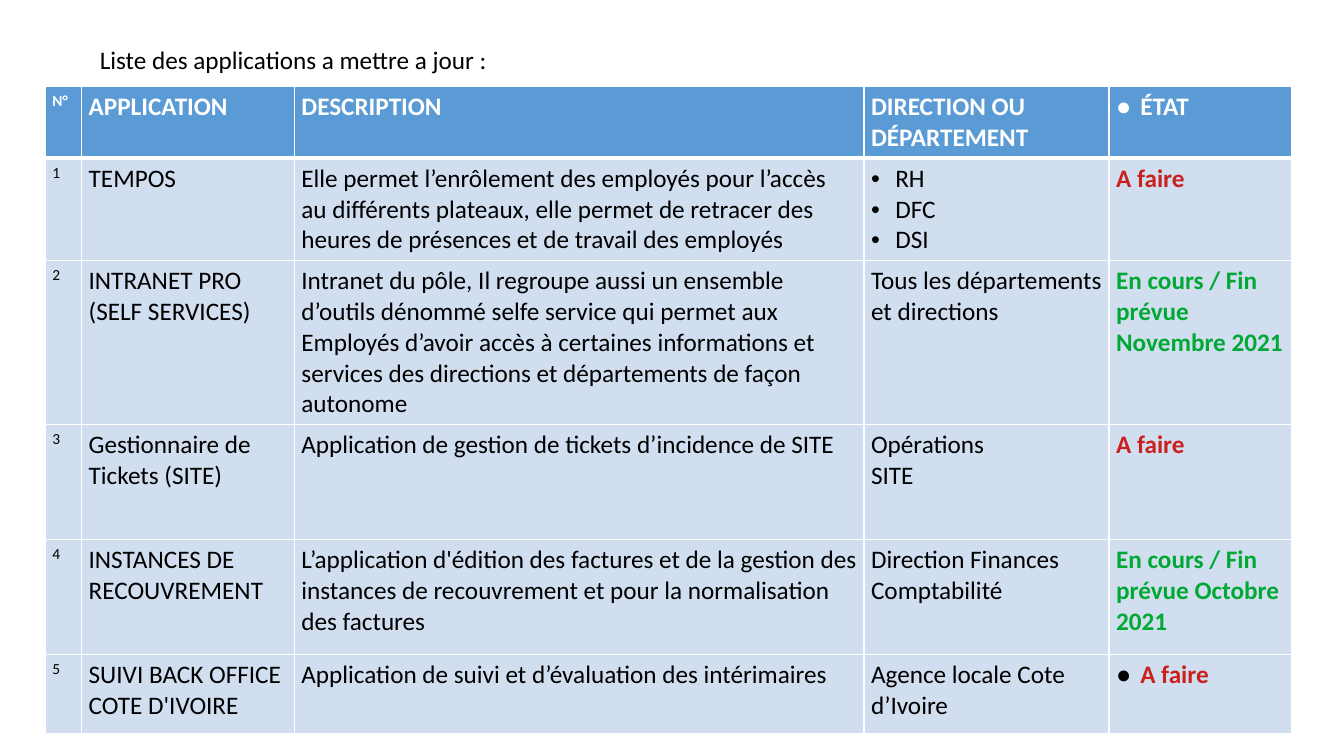
"""Build the slide listing the applications to update."""
from dataclasses import dataclass

import lxml.etree
import pptx
import pptx.dml.color
import pptx.enum.text
import pptx.oxml.ns
import pptx.util
from pptx.util import Inches

COLORS = {
    "header": "5B9BD5",
    "body": "D1DEEF",
    "white": "FFFFFF",
    "black": "000000",
    "todo": "C9211E",
    "ongoing": "00A933",
}
FONT = "Calibri"
COLUMN_WIDTHS = [0.36, 2.11, 5.65, 2.43, 1.81]
ROW_HEIGHTS = [0.6, 0.98, 1.36, 1.14, 1.14, 0.79]
HEADINGS = ["N°", "APPLICATION", "DESCRIPTION", "DIRECTION OU DÉPARTEMENT", "ÉTAT"]
THIN, THICK = 0.96, 3


@dataclass
class Application:
    """One application with its owner and its progress."""
    name: str
    description: str
    departments: list[str]
    state: str
    state_color: str
    department_bullet: str = ""
    state_bullet: str = ""


APPLICATIONS = [
    Application(
        "TEMPOS",
        "Elle permet l’enrôlement des employés pour l’accès au différents plateaux, "
        "elle permet de retracer des heures de présences et de travail des employés",
        ["RH", "DFC", "DSI"], "A faire", "todo", department_bullet="•"),
    Application(
        "INTRANET PRO (SELF SERVICES)",
        "Intranet du pôle, Il regroupe aussi un ensemble d’outils dénommé selfe service "
        "qui permet aux Employés d’avoir accès à certaines informations et services "
        "des directions et départements de façon autonome",
        ["Tous les départements et directions"],
        "En cours / Fin prévue Novembre 2021", "ongoing"),
    Application(
        "Gestionnaire de Tickets (SITE)",
        "Application de gestion de tickets d’incidence de SITE",
        ["Opérations", "SITE"], "A faire", "todo"),
    Application(
        "INSTANCES DE RECOUVREMENT",
        "L’application d'édition des factures et de la gestion des instances de "
        "recouvrement et pour la normalisation des factures",
        ["Direction Finances Comptabilité"],
        "En cours / Fin prévue Octobre 2021", "ongoing"),
    Application(
        "SUIVI BACK OFFICE COTE D'IVOIRE",
        "Application de suivi et d’évaluation des intérimaires",
        ["Agence locale Cote d’Ivoire"], "A faire", "todo", state_bullet="●"),
]


def rgb(color: str) -> pptx.dml.color.RGBColor:
    """Return the named colour."""
    return pptx.dml.color.RGBColor.from_string(COLORS[color])


def add_element(parent, tag: str, **attributes: str):
    """Append a drawing element to its parent."""
    return lxml.etree.SubElement(parent, pptx.oxml.ns.qn(tag), attributes)


def add_color(parent, color: str) -> None:
    """Append a colour value to an element."""
    add_element(parent, "a:srgbClr", val=COLORS[color])


def add_bullet(para, symbol: str, color: str) -> None:
    """Give a paragraph a hanging bullet."""
    properties = para._p.get_or_add_pPr()
    properties.set("marL", str(Inches(0.24)))
    properties.set("indent", str(Inches(-0.24)))
    add_color(add_element(properties, "a:buClr"), color)
    add_element(properties, "a:buFont", typeface="Arial")
    add_element(properties, "a:buChar", char=symbol)


def write_text(frame, lines: list[str], *, size: float = 18, color: str = "black",
               bold: bool = False, bullet: str = "", bullet_color: str = "black") -> None:
    """Write formatted paragraphs into a text frame."""
    frame.word_wrap = True
    for index, line in enumerate(lines):
        para = frame.add_paragraph() if index else frame.paragraphs[0]
        para.alignment = pptx.enum.text.PP_ALIGN.LEFT
        if bullet:
            add_bullet(para, bullet, bullet_color)
        span = para.add_run()
        span.text = line
        span.font.name = FONT
        span.font.size = pptx.util.Pt(size)
        span.font.bold = bold
        span.font.color.rgb = rgb(color)


def format_cell(cell, fill: str, top: float, bottom: float) -> None:
    """Set the margins, borders and fill of a cell."""
    cell.margin_left = cell.margin_right = Inches(0.07)
    cell.margin_top = cell.margin_bottom = Inches(0.05)
    properties = cell._tc.get_or_add_tcPr()
    borders = {"a:lnL": THIN, "a:lnR": THIN, "a:lnT": top, "a:lnB": bottom}
    for tag, width in borders.items():
        line = add_element(properties, tag, w=str(pptx.util.Pt(width)))
        add_color(add_element(line, "a:solidFill"), "white")
    cell.fill.solid()
    cell.fill.fore_color.rgb = rgb(fill)


def add_title(page) -> None:
    """Place the title above the table."""
    box = page.shapes.title
    box.left, box.top = Inches(0.89), Inches(0.39)
    box.width, box.height = Inches(11.12), Inches(0.4)
    frame = box.text_frame
    frame.auto_size = pptx.enum.text.MSO_AUTO_SIZE.NONE
    frame.vertical_anchor = pptx.enum.text.MSO_ANCHOR.TOP
    write_text(frame, ["Liste des applications a mettre a jour :"])


def add_applications(page) -> None:
    """Draw the table of applications."""
    table = page.shapes.add_table(
        len(ROW_HEIGHTS), len(COLUMN_WIDTHS), Inches(0.45), Inches(0.86),
        Inches(sum(COLUMN_WIDTHS)), Inches(sum(ROW_HEIGHTS))).table
    table.first_row = table.horz_banding = False
    for column, width in zip(table.columns, COLUMN_WIDTHS):
        column.width = Inches(width)
    for index, (row, height) in enumerate(zip(table.rows, ROW_HEIGHTS)):
        row.height = Inches(height)
        for cell in row.cells:
            format_cell(cell, "body" if index else "header",
                        THICK if index == 1 else THIN, THIN if index else THICK)

    for column, heading in enumerate(HEADINGS):
        write_text(table.cell(0, column).text_frame, [heading],
                   size=18 if column else 11, color="white", bold=True,
                   bullet="●" if heading == "ÉTAT" else "", bullet_color="white")
    for number, application in enumerate(APPLICATIONS, start=1):
        frames = [table.cell(number, column).text_frame for column in range(len(HEADINGS))]
        write_text(frames[0], [str(number)], size=11)
        write_text(frames[1], [application.name])
        write_text(frames[2], [application.description])
        write_text(frames[3], application.departments, bullet=application.department_bullet)
        write_text(frames[4], [application.state], color=application.state_color,
                   bold=True, bullet=application.state_bullet)


def main() -> None:
    """Build and save the deck."""
    deck = pptx.Presentation()
    deck.slide_width, deck.slide_height = Inches(13.33), Inches(7.5)
    page = deck.slides.add_slide(deck.slide_layouts.get_by_name("Title Only"))
    add_title(page)
    add_applications(page)
    deck.save("out.pptx")


if __name__ == "__main__":
    main()
